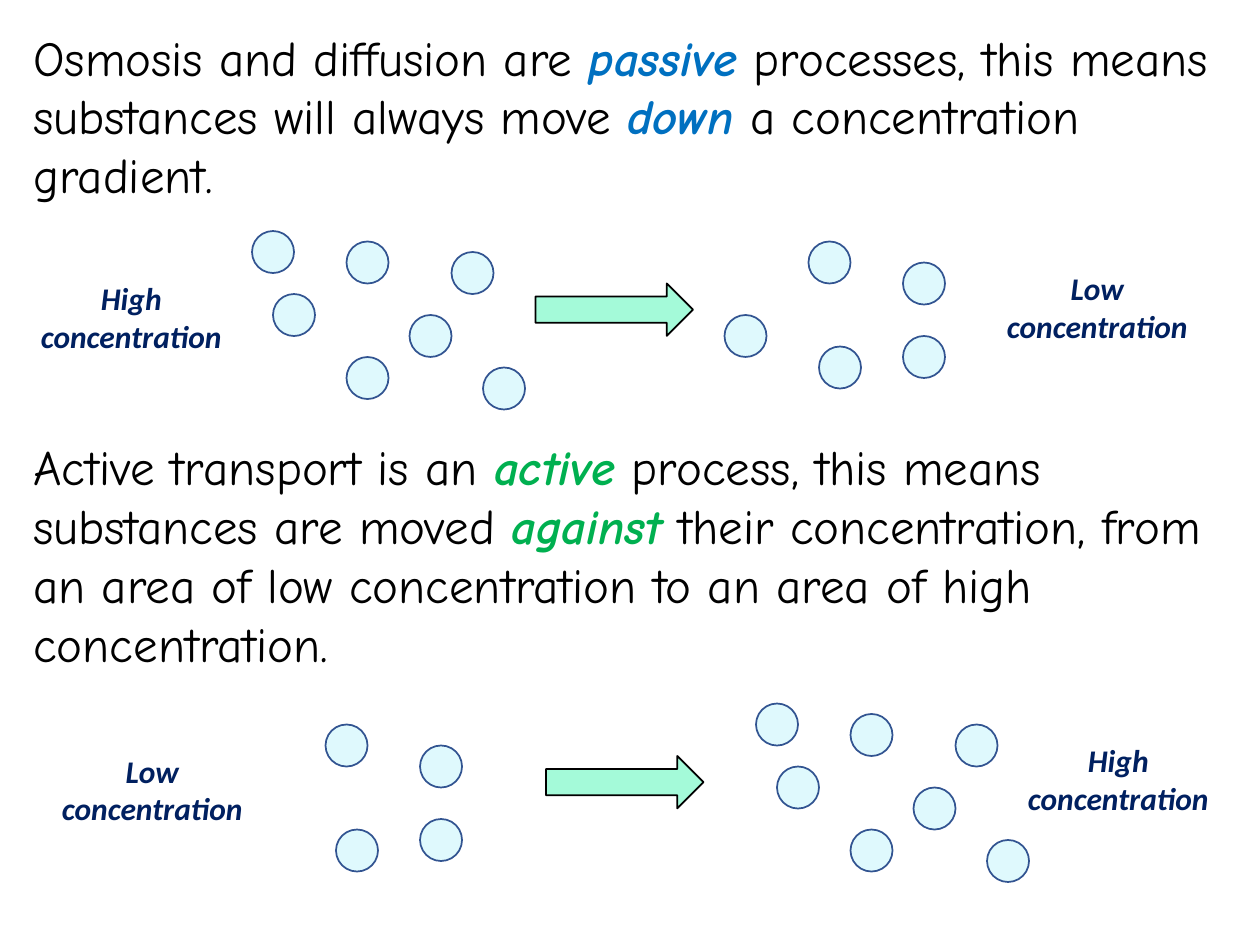
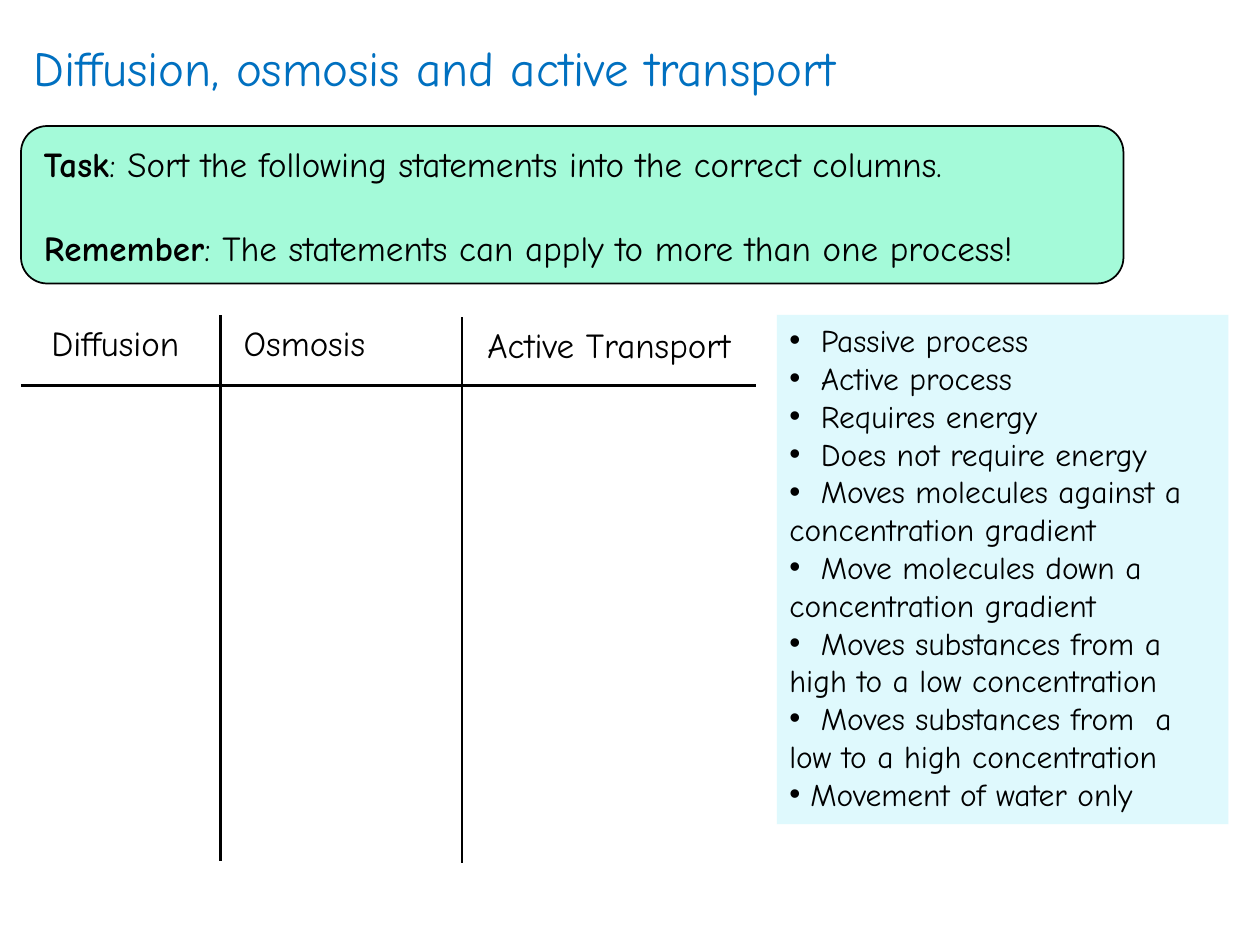
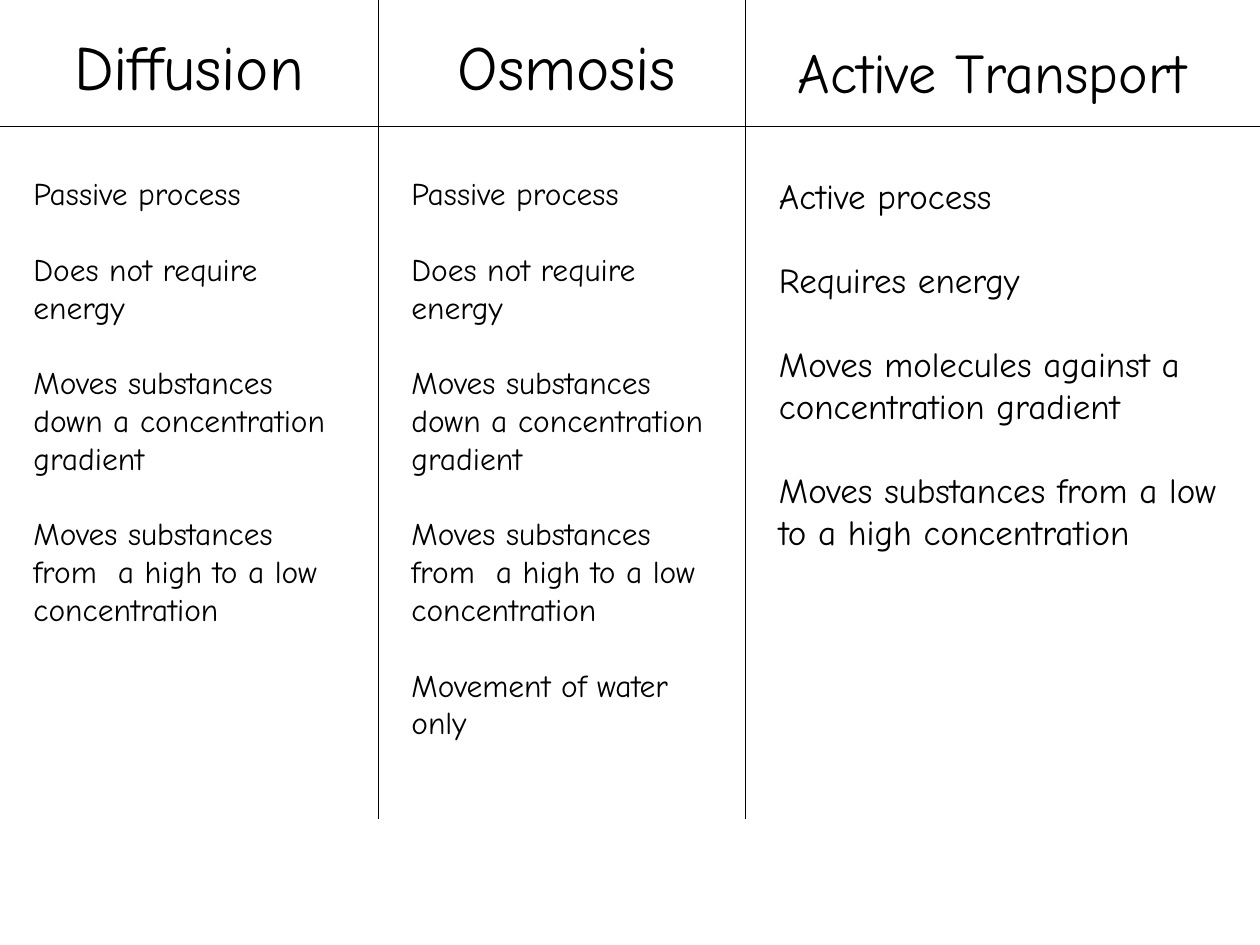
import pptx
import pptx.dml.color
import pptx.enum.shapes
import pptx.enum.text
import pptx.oxml.ns
import pptx.util
from lxml import etree

PX = 7620  # EMU per px, 120 px to the inch
COLORS = {
    "black": "000000", "blue": "0070C0", "green": "00B050", "navy": "002060",
    "mint": "A4FAD9", "ice": "DFF9FD", "outline": "325491",
}
BODY_FONT = "Comic Neue"
LABEL_FONT = "Calibri"
LINE_HEIGHT = 1.2  # of the type size
SHAPE = pptx.enum.shapes.MSO_SHAPE
ALIGN = pptx.enum.text.PP_ALIGN
qn = pptx.oxml.ns.qn


def rgb(name):
    return pptx.dml.color.RGBColor.from_string(COLORS[name])


def emu(*lengths):
    return [n * PX for n in lengths]


class Deck:
    """Holds the style and the current slide."""

    def __init__(self):
        self.prs = pptx.Presentation()
        self.prs.slide_width, self.prs.slide_height = emu(1200, 900)
        self.slide = None

    def new_slide(self):
        self.slide = self.prs.slides.add_slide(self.prs.slide_layouts[6])

    def shape(self, kind, x, y, w, h, fill, line=None):
        sp = self.slide.shapes.add_shape(kind, *emu(x, y, w, h))
        sp.shadow.inherit = False
        sp.fill.solid()
        sp.fill.fore_color.rgb = rgb(fill)
        if line:
            sp.line.color.rgb = rgb(line)
            sp.line.width = pptx.util.Pt(1)
        else:
            sp.line.fill.background()
        return sp

    def dots(self, x, y, offsets):
        for dx, dy in offsets:
            self.shape(SHAPE.OVAL, x + dx, y + dy, 40, 40, "ice", "outline")

    def arrow(self, x, y):
        self.shape(SHAPE.RIGHT_ARROW, x, y, 150, 50, "mint", "black")

    def line(self, x1, y1, x2, y2, width):
        cx = self.slide.shapes.add_connector(
            pptx.enum.shapes.MSO_CONNECTOR.STRAIGHT, *emu(x1, y1, x2, y2))
        cx.line.color.rgb = rgb("black")
        cx.line.width = pptx.util.Pt(width)
        etree.SubElement(cx._element.spPr, qn("a:effectLst"))

    def fill_text(self, sp, paragraphs, size, color="black", font=BODY_FONT,
                  bold=False, italic=False, align=ALIGN.LEFT, gap=0):
        """Each paragraph is a string or a list of (text, format) runs."""
        tf = sp.text_frame
        tf.word_wrap = True
        tf.vertical_anchor = pptx.enum.text.MSO_ANCHOR.TOP
        for i, runs in enumerate(paragraphs):
            p = tf.paragraphs[0] if i == 0 else tf.add_paragraph()
            p.alignment = align
            if i and gap:
                p.space_before = pptx.util.Pt(gap)
            for text, fmt in [(runs, {})] if isinstance(runs, str) else runs:
                r = p.add_run()
                r.text = text
                r.font.name = font
                r.font.size = pptx.util.Pt(size)
                r.font.bold = fmt.get("bold", bold)
                r.font.italic = fmt.get("italic", italic)
                r.font.color.rgb = rgb(fmt.get("color", color))
        return tf

    def text(self, x, y, w, h, paragraphs, size, **style):
        sp = self.slide.shapes.add_textbox(*emu(x, y, w, h))
        return self.fill_text(sp, paragraphs, size, **style)

    def heading(self, x, y, w, h, text, size):
        self.text(x, y, w, h, [text], size, align=ALIGN.CENTER)

    def label(self, x, y, text):
        self.text(x, y, 210, 85, [text], 18, color="navy", font=LABEL_FONT,
                  bold=True, italic=True, align=ALIGN.CENTER)

    def statements(self, x, y, w, h, paragraphs, size):
        self.text(x, y, w, h, paragraphs, size, gap=size * LINE_HEIGHT)

    def bullet(self, p, tab):
        """Bullet at the margin, first line starting at the tab stop."""
        pPr = p._p.get_or_add_pPr()
        pPr.set("marL", "0")
        pPr.set("indent", "0")
        etree.SubElement(pPr, qn("a:buFont"), typeface="Arial")
        etree.SubElement(pPr, qn("a:buChar"), char="•")
        tabs = etree.SubElement(pPr, qn("a:tabLst"))
        etree.SubElement(tabs, qn("a:tab"), pos=str(tab * PX), algn="l")


# Dot positions within each group
CROWDED = [(90, 10), (150, 80), (20, 60), (190, 20), (90, 120), (220, 130), (0, 0)]
SPARSE = [(0, 0), (10, 100), (90, 20), (90, 90)]


def passive_and_active(deck):
    deck.new_slide()
    passive = dict(color="blue", bold=True, italic=True)
    active = dict(passive, color="green")
    deck.text(20, 20, 1160, 218, [[
        ("Osmosis and diffusion are ", {}), ("passive", passive),
        (" processes, this means substances will always move ", {}),
        ("down", passive), (" a concentration gradient.", {})]], 28)
    deck.text(20, 410, 1160, 239, [[
        ("Active transport is an ", {}), ("active", active),
        (" process, this means substances are moved ", {}), ("against", active),
        (" their concentration, from an area of low concentration"
         " to an area of high concentration.", {})]], 28)

    # Down the gradient
    deck.dots(240, 220, CROWDED)
    deck.dots(770, 230, SPARSE + [(-80, 70)])
    deck.arrow(510, 270)
    deck.label(20, 260, "High concentration")
    deck.label(940, 250, "Low concentration")

    # Against the gradient
    deck.dots(720, 670, CROWDED)
    deck.dots(310, 690, SPARSE)
    deck.arrow(520, 720)
    deck.label(960, 700, "High concentration")
    deck.label(40, 710, "Low concentration")


def sorting_task(deck):
    deck.new_slide()
    # Title and task
    deck.shape(SHAPE.ROUNDED_RECTANGLE, 20, 120, 1050, 150, "mint", "black")
    tf = deck.text(20, 36, 1150, 65, ["Diffusion, osmosis and active transport"],
                   28, color="blue")
    tf.paragraphs[0].line_spacing = 0.9
    tf.paragraphs[0].space_before = pptx.util.Pt(10)
    bold = dict(bold=True)
    deck.statements(30, 130, 1040, 133, [
        [("Task", bold),
         (": Sort the following statements into the correct columns.", {})],
        [("Remember", bold),
         (": The statements can apply to more than one process!", {})]], 20)

    # Statements to sort
    items = ["Passive process", "Active process", "Requires energy",
             "Does not require energy",
             "Moves molecules against a concentration gradient",
             "Move molecules down a concentration gradient",
             "Moves substances from a high to a low concentration",
             "Moves substances from  a low to a high concentration",
             "Movement of water only"]
    panel = deck.shape(SHAPE.RECTANGLE, 740, 300, 430, 485, "ice")
    tf = deck.fill_text(panel, ["\t" + item for item in items], 18)
    for p in tf.paragraphs[:-1]:
        deck.bullet(p, 30)
    deck.bullet(tf.paragraphs[-1], 20)

    # Empty columns
    deck.heading(20, 300, 180, 53, "Diffusion", 20)
    deck.heading(200, 300, 180, 53, "Osmosis", 20)
    deck.heading(430, 302, 300, 53, "Active Transport", 20)
    deck.line(20, 367, 720, 367, 1.5)
    for x, top in [(210, 300), (440, 302)]:
        deck.line(x, top, x, top + 520, 1.5)


def sorted_answers(deck):
    deck.new_slide()
    # Headings and rules
    deck.heading(20, 20, 320, 85, "Diffusion", 36)
    deck.heading(390, 20, 300, 85, "Osmosis", 36)
    deck.heading(710, 30, 470, 77, "Active Transport", 32)
    for x in (360, 710):
        deck.line(x, 0, x, 780, 0.5)
    deck.line(0, 120, 1200, 120, 0.5)

    # Answers
    diffusion = ["Passive process", "Does not require energy",
                 "Moves substances down a concentration gradient",
                 "Moves substances from  a high to a low concentration"]
    deck.statements(20, 160, 320, 449, diffusion, 18)
    deck.statements(380, 160, 320, 557, diffusion + ["Movement of water only"], 18)
    deck.statements(730, 160, 450, 376, [
        "Active process", "Requires energy",
        "Moves molecules against a concentration gradient",
        "Moves substances from a low to a high concentration"], 20)


def main():
    deck = Deck()
    passive_and_active(deck)
    sorting_task(deck)
    sorted_answers(deck)
    deck.prs.save("out.pptx")


if __name__ == "__main__":
    main()
